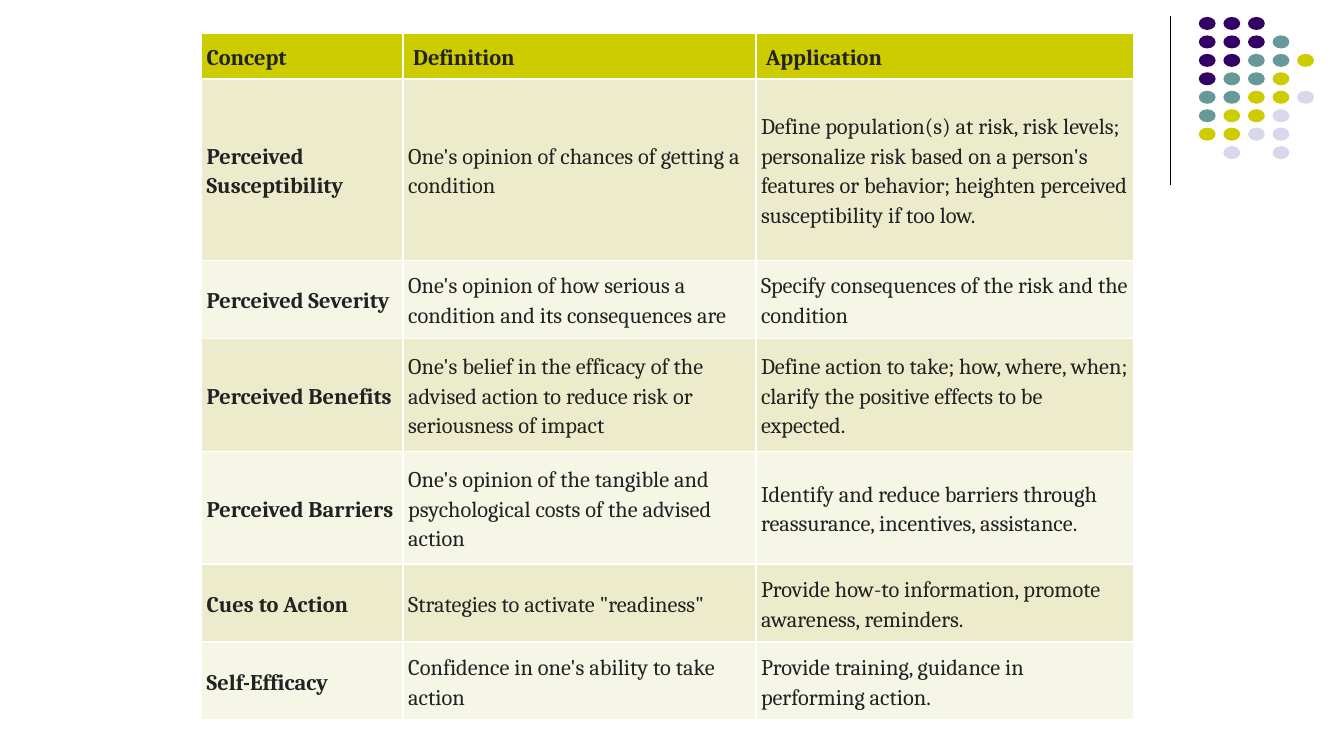
import dataclasses

import lxml.etree
import pptx
import pptx.dml.color
import pptx.enum.shapes
import pptx.enum.text
import pptx.oxml.ns
import pptx.util


@dataclasses.dataclass(frozen=True)
class Theme:
    font: str = "Cambria"
    text_size: float = 12
    line_spacing: float = 1.15
    text: str = "222222"
    border: str = "FFFFFF"
    header: str = "CCCC00"
    bands: tuple = ("ECECCC", "F6F6E7")
    rule: str = "000000"
    dots: tuple = ("330066", "669999", "CCCC00", "D8D8EC")


THEME = Theme()
WIDTH = pptx.util.Inches(10)
HEIGHT = WIDTH * 9 // 16

# Each digit picks a dot colour; a point leaves the place empty.
DOT_ROWS = ("000..", "0001.", "00112", "0112.", "11223", "1223.", "2233.", ".3.3.")

# Shares of the slide, in percent.
COLUMN_SHARES = (15, 26.25, 28.13)
ROW_SHARES = (6.04, 24, 10.31, 14.93, 14.93, 10.31, 10.31)

# Each cell is a tuple of runs.
HEADER = (("Concept",), (" ", "Definition"), (" ", "Application"))
CONCEPTS = (
    ("Perceived Susceptibility",
     "One's opinion of chances of getting a condition",
     "Define population(s) at risk, risk levels; personalize risk based on a person's "
     "features or behavior; heighten perceived susceptibility if too low."),
    ("Perceived Severity",
     "One's opinion of how serious a condition and its consequences are",
     "Specify consequences of the risk and the condition"),
    ("Perceived Benefits",
     "One's belief in the efficacy of the advised action to reduce risk or "
     "seriousness of impact",
     "Define action to take; how, where, when; clarify the positive effects to be expected."),
    ("Perceived Barriers",
     "One's opinion of the tangible and psychological costs of the advised action",
     "Identify and reduce barriers through reassurance, incentives, assistance."),
    ("Cues to Action",
     "Strategies to activate \"readiness\"",
     "Provide how-to information, promote awareness, reminders."),
    ("Self-Efficacy",
     "Confidence in one's ability to take action",
     "Provide training, guidance in performing action."),
)


def across(percent):
    return round(WIDTH * percent / 100)


def down(percent):
    return round(HEIGHT * percent / 100)


def rgb(value):
    return pptx.dml.color.RGBColor.from_string(value)


def add_rule(s):
    x = across(87.1)
    line = s.shapes.add_connector(
        pptx.enum.shapes.MSO_CONNECTOR.STRAIGHT, x, down(2.13), x, down(24.53))
    line.line.color.rgb = rgb(THEME.rule)
    line.line.width = pptx.util.Pt(0.75)
    lxml.etree.SubElement(line._element.spPr, pptx.oxml.ns.qn("a:effectLst"))


def add_dots(s):
    group = s.shapes.add_group_shape()
    for row, colours in enumerate(DOT_ROWS):
        for column, colour in enumerate(colours):
            if colour == ".":
                continue
            dot = group.shapes.add_shape(
                pptx.enum.shapes.MSO_SHAPE.OVAL,
                across(89.2 + 1.83 * column), down(2.25 + 2.44 * row),
                across(1.25), down(1.72))
            dot.shadow.inherit = False
            dot.fill.solid()
            dot.fill.fore_color.rgb = rgb(THEME.dots[int(colour)])
            dot.line.fill.background()


def set_borders(cell):
    properties = cell._tc.get_or_add_tcPr()
    for place, side in enumerate("LRTB"):
        line = lxml.etree.Element(
            pptx.oxml.ns.qn(f"a:ln{side}"), w=str(pptx.util.Pt(1)))
        fill = lxml.etree.SubElement(line, pptx.oxml.ns.qn("a:solidFill"))
        lxml.etree.SubElement(fill, pptx.oxml.ns.qn("a:srgbClr"), val=THEME.border)
        properties.insert(place, line)


def fill_cell(cell, texts, colour, bold):
    """Write one run per text; only the last run can be bold."""
    cell.fill.solid()
    cell.fill.fore_color.rgb = rgb(colour)
    set_borders(cell)
    cell.vertical_anchor = pptx.enum.text.MSO_ANCHOR.MIDDLE
    cell.margin_left = cell.margin_right = pptx.util.Pt(2.7)
    cell.margin_top = cell.margin_bottom = pptx.util.Pt(2.7)
    p = cell.text_frame.paragraphs[0]
    p.line_spacing = THEME.line_spacing
    for text in texts:
        r = p.add_run()
        r.text = text
        r.font.name = THEME.font
        r.font.size = pptx.util.Pt(THEME.text_size)
        r.font.bold = bold and text == texts[-1]
        r.font.color.rgb = rgb(THEME.text)


def add_concept_table(s):
    table = s.shapes.add_table(
        len(ROW_SHARES), len(COLUMN_SHARES), across(15), down(4.44),
        across(sum(COLUMN_SHARES)), down(sum(ROW_SHARES))).table
    for column, share in zip(table.columns, COLUMN_SHARES):
        column.width = across(share)
    for row, share in zip(table.rows, ROW_SHARES):
        row.height = down(share)
    for j, texts in enumerate(HEADER):
        fill_cell(table.cell(0, j), texts, THEME.header, bold=True)
    for i, concept in enumerate(CONCEPTS):
        for j, text in enumerate(concept):
            fill_cell(table.cell(i + 1, j), (text,), THEME.bands[i % 2], bold=j == 0)


def main():
    prs = pptx.Presentation()
    prs.slide_width, prs.slide_height = WIDTH, HEIGHT
    s = prs.slides.add_slide(prs.slide_layouts[6])
    add_rule(s)
    add_dots(s)
    add_concept_table(s)
    prs.save("out.pptx")


if __name__ == "__main__":
    main()
